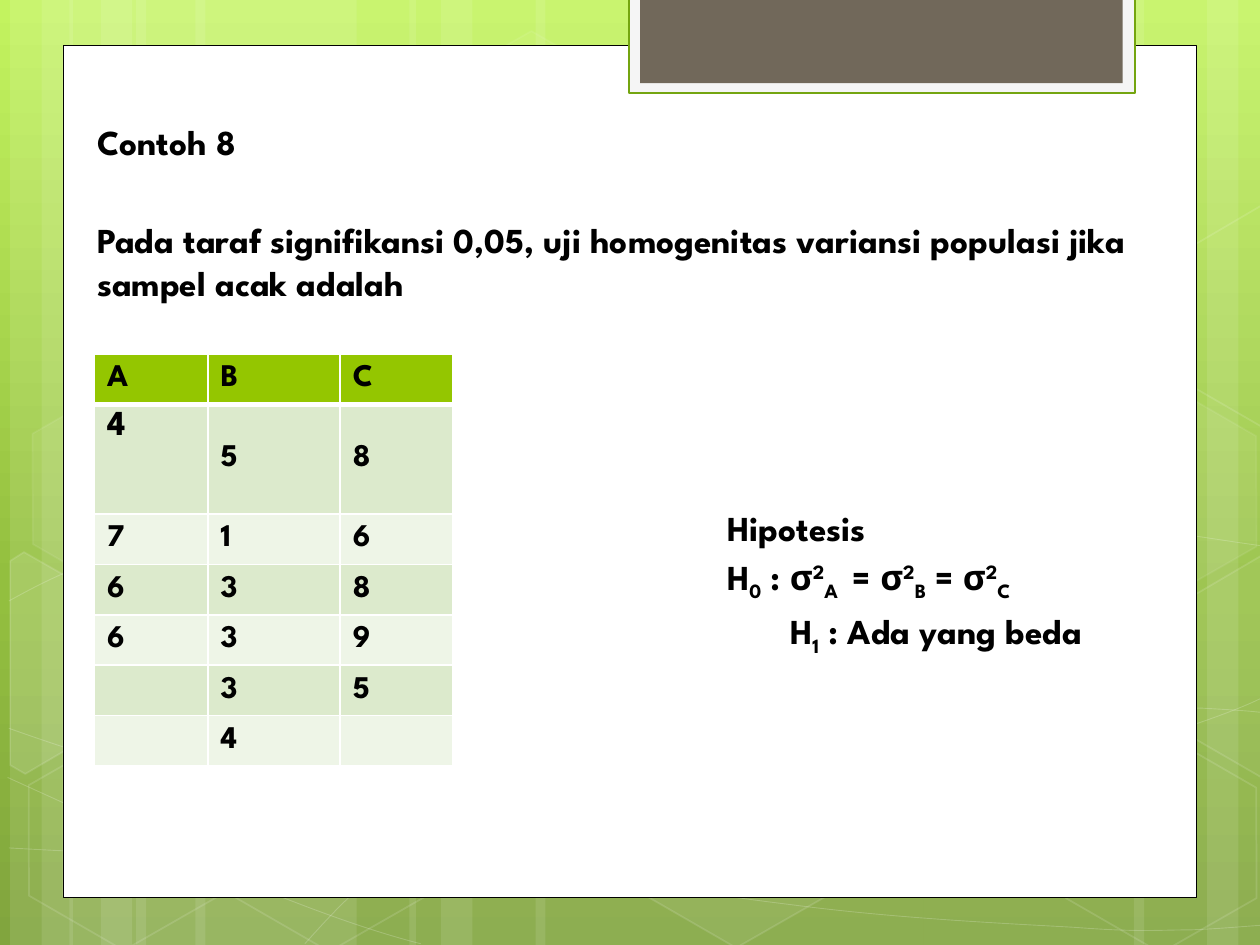
import copy
import math
from dataclasses import dataclass, field
from typing import Any, Optional

import pptx
import pptx.dml.color
import pptx.enum.shapes
import pptx.enum.text
import pptx.oxml
import pptx.oxml.ns
import pptx.util
from pptx.util import Inches

qn = pptx.oxml.ns.qn
NAMESPACE = pptx.oxml.ns.nsdecls("a")
SHAPES = pptx.enum.shapes.MSO_SHAPE
ANCHORS = pptx.enum.text.MSO_ANCHOR
TILT = 30
Point = tuple[float, float]


@dataclass(frozen=True)
class Theme:
    font: str = "League Spartan"
    body_size: int = 20
    cell_size: int = 18
    ink: str = "000000"
    white: str = "FFFFFF"
    frame: str = "F5F5F5"
    frame_line: str = "74A510"
    tab: str = "71685A"
    header: str = "94C600"
    stripes: tuple[str, str] = ("DCEACC", "EEF5E7")
    gradient: tuple = ((0, "C3F35F"), (0.62, "93BF3F"), (1, "81A53E"))


@dataclass(frozen=True)
class Paint:
    fill: Optional[str] = None
    fill_alpha: int = 100
    line: Optional[str] = None
    width: float = 1
    line_alpha: int = 100


@dataclass(frozen=True)
class Hexagon:
    left: float
    top: float
    fill_alpha: int
    line_alpha: int


@dataclass(frozen=True)
class CutHexagon:
    center: Point
    fill_alpha: int
    corners: list[Point]


@dataclass(frozen=True)
class BodyLine:
    spans: list[tuple[str, int]]
    space: float = 4
    level: int = 0
    indent: float = 0


@dataclass(frozen=True)
class DataTable:
    left: float = 0.75
    top: float = 2.81
    widths: tuple = (0.9, 1.05, 0.89)
    heights: tuple = (0.4, 0.87) + (0.4,) * 5
    rows: list[str] = field(default_factory=lambda: ["ABC", "458", "716", "638", "639", " 35", " 4 "])


THEME = Theme()
BANDS = [(1.08, 1.75), (0.08, 0.5), (0.33, 0.83), (1.55, 1.75), (0.55, 0.5), (0.8, 0.83),
         (7.33, 1.75), (9.58, 0.5), (9, 0.83), (4.25, 3.08), (3.25, 0.5), (3.5, 0.83)]
CURVES = [
    [(0.07, 6.73), (0.61, 6.76), (1.15, 6.79), (1.9, 6.78), (2.65, 6.77), (3.58, 6.75), (4.58, 6.65),
     (5.58, 6.55), (7, 6.36), (7.92, 6.17), (8.83, 5.98), (9.77, 5.68), (10.07, 5.51)],
    [(0.07, 4.77), (0.36, 4.61), (0.65, 4.46), (1.21, 4.31), (1.78, 4.16), (2.59, 3.94), (3.47, 3.87),
     (4.36, 3.8), (5.44, 3.79), (6.54, 3.87), (7.64, 3.95), (9.47, 4.26), (10.07, 4.34)],
    [(0.06, 6.17), (1.27, 6.72), (2.47, 7.27), (3.34, 7.49)],
    [(0.07, 5.78), (0.38, 5.89), (0.7, 6), (1.28, 6.16), (1.86, 6.31), (2.73, 6.56), (3.57, 6.73),
     (4.4, 6.9), (5.45, 7.08), (6.28, 7.18), (7.11, 7.29), (8, 7.33), (8.53, 7.36),
     (9.05, 7.4), (9.19, 7.38), (9.45, 7.38), (9.71, 7.37), (9.89, 7.35), (10.07, 7.34)],
    [(2.42, 7.49), (2.6, 7.29), (2.78, 7.09), (3.02, 6.91), (3.26, 6.73), (3.6, 6.53), (3.88, 6.39),
     (4.16, 6.25), (4.33, 6.19), (4.7, 6.09), (5.06, 5.99), (5.73, 5.85), (6.08, 5.78),
     (6.44, 5.71), (6.49, 5.71), (6.8, 5.69), (7.11, 5.66), (7.6, 5.63), (7.94, 5.62),
     (8.29, 5.61), (8.86, 5.62), (8.86, 5.62), (8.86, 5.62), (9.53, 5.62), (9.53, 5.62),
     (9.71, 5.63), (9.88, 5.64), (9.97, 5.65), (10.06, 5.66), (10.03, 5.65), (10.06, 5.66)],
]
HEXAGONS = [Hexagon(3.34, 0.36, 4, 8), Hexagon(4.97, 5.89, 6, 12), Hexagon(0.11, 5.91, 0, 12),
            Hexagon(0.14, 3.12, 7, 8), Hexagon(1.74, 5.92, 0, 12), Hexagon(7.53, 4.53, 10, 12),
            Hexagon(8.34, 5.93, 0, 12), Hexagon(8.34, 3.14, 7, 8)]
CUT_HEXAGONS = [
    CutHexagon((0.36, 5.35), 10, [(0.08, 4.45), (0.19, 4.38), (0.96, 4.82), (0.95, 5.7), (0.2, 6.14), (0.08, 6.07)]),
    CutHexagon((9.85, 5.2), 4, [(9.26, 4.85), (10.01, 4.41), (10.09, 4.46), (10.09, 6.13), (10.02, 6.17), (9.26, 5.73)]),
    CutHexagon((9.85, 2.41), 0, [(9.26, 2.07), (10.01, 1.63), (10.1, 1.68), (10.09, 3.35), (10.02, 3.39), (9.26, 2.95)]),
]
BODY = [
    BodyLine([("Contoh 8", 0)]),
    BodyLine([("Pada taraf signifikansi 0,05, uji homogenitas variansi populasi jika sampel acak adalah", 0)],
             space=32),
    BodyLine([("Hipotesis", 0)], space=116, level=2, indent=5),
    BodyLine([("H", 0), ("0", -25), (" : σ", 0), ("2", 30), ("A ", -25), (" = σ", 0), ("2", 30),
              ("B", -25), (" = σ", 0), ("2", 30), ("C", -25)], level=2, indent=5),
    BodyLine([("H", 0), ("1", -25), (" : Ada yang beda", 0)], level=3, indent=5.5),
]


def color(value: str) -> pptx.dml.color.RGBColor:
    return pptx.dml.color.RGBColor.from_string(value)


def set_values(target: Any, values: dict[str, Any]) -> None:
    for name, value in values.items():
        setattr(target, name, value)


def set_font(font: Any, size: int) -> None:
    set_values(font, {"name": THEME.font, "size": pptx.util.Pt(size), "bold": True})
    font.color.rgb = color(THEME.ink)


def paint_fill(fill: Any, value: Optional[str], alpha: int, owner: Any) -> None:
    if value is None or alpha == 0:
        fill.background()
        return
    fill.solid()
    fill.fore_color.rgb = color(value)
    if alpha < 100:
        tint = owner.find(qn("a:solidFill")).find(qn("a:srgbClr"))
        tint.append(pptx.oxml.parse_xml(f'<a:alpha {NAMESPACE} val="{alpha * 1000}"/>'))


def paint_shape(shape: Any, paint: Paint) -> None:
    shape.shadow.inherit = False
    properties = shape.element.spPr
    paint_fill(shape.fill, paint.fill, paint.fill_alpha, properties)
    shape.line.width = pptx.util.Pt(paint.width)
    paint_fill(shape.line.fill, paint.line, paint.line_alpha, properties.find(qn("a:ln")))


def add_preset(page: Any, kind: Any, box: tuple[float, float, float, float], paint: Paint) -> Any:
    shape = page.shapes.add_shape(kind, *map(Inches, box))
    paint_shape(shape, paint)
    return shape


def add_outline(page: Any, points: list[Point], paint: Paint, close: bool) -> Any:
    corners = [(Inches(x), Inches(y)) for x, y in points]
    builder = page.shapes.build_freeform(*corners[0])
    builder.add_line_segments(corners[1:], close=close)
    shape = builder.convert_to_shape()
    paint_shape(shape, paint)
    return shape


def add_curve(page: Any, knots: list[Point], paint: Paint) -> None:
    outline = add_outline(page, knots, paint, False).element.find(".//" + qn("a:path"))
    segments = outline.findall(qn("a:lnTo"))
    for start in range(0, len(segments), 3):
        bend = pptx.oxml.parse_xml(f"<a:cubicBezTo {NAMESPACE}/>")
        for segment in segments[start:start + 3]:
            bend.append(segment[0])
            outline.remove(segment)
        outline.append(bend)


def untilt(point: Point, center: Point) -> Point:
    angle = math.radians(TILT)
    x, y = point[0] - center[0], point[1] - center[1]
    return (center[0] + x * math.cos(angle) + y * math.sin(angle),
            center[1] - x * math.sin(angle) + y * math.cos(angle))


def paint_background(page: Any) -> None:
    fill = page.background.fill
    fill.gradient()
    fill.gradient_angle = 270
    stops = page.element.find(".//" + qn("a:gsLst"))
    stops.append(copy.deepcopy(stops[0]))
    for stop, (position, value) in zip(fill.gradient_stops, THEME.gradient):
        stop.position = position
        stop.color.rgb = color(value)


def add_backdrop(page: Any) -> None:
    white = THEME.white
    for left, width in BANDS:
        add_preset(page, SHAPES.RECTANGLE, (left, 0, width, 7.5), Paint(white, 10))
    for knots in CURVES:
        add_curve(page, knots, Paint(line=white, width=0.5, line_alpha=20))
    for item in HEXAGONS:
        shape = add_preset(page, SHAPES.HEXAGON, (item.left, item.top, 1.75, 1.52),
                           Paint(white, item.fill_alpha, white, 1, item.line_alpha))
        shape.rotation = TILT
        shape.adjustments[0], shape.adjustments[1] = 0.29, 1.15
    for item in CUT_HEXAGONS:
        corners = [untilt(corner, item.center) for corner in item.corners]
        add_outline(page, corners, Paint(white, item.fill_alpha, white, 1, 12), True).rotation = TILT
    for box, paint in [((0.5, 0.36, 9, 6.76), Paint(white, line=THEME.ink, width=0.5)),
                       ((4.99, -0.02, 4.02, 0.76), Paint(THEME.frame, line=THEME.frame_line, width=1.25)),
                       ((5.08, -0.02, 3.83, 0.68), Paint(THEME.tab))]:
        add_preset(page, SHAPES.RECTANGLE, box, paint)


def fill_body(page: Any, body: Any) -> None:
    page.shapes.element.append(body.element)
    set_values(body, {"left": Inches(0.67), "top": Inches(0.91), "width": Inches(8.66), "height": Inches(6.06)})
    frame = body.text_frame
    set_values(frame, {"word_wrap": True, "auto_size": pptx.enum.text.MSO_AUTO_SIZE.NONE,
                       "vertical_anchor": ANCHORS.TOP})
    for index, line in enumerate(BODY):
        para = frame.add_paragraph() if index else frame.paragraphs[0]
        set_values(para, {"level": line.level, "space_before": pptx.util.Pt(line.space)})
        properties = para._p.get_or_add_pPr()
        properties.set("marL", str(Inches(line.indent)))
        properties.set("indent", "0")
        properties.append(pptx.oxml.parse_xml(f"<a:buNone {NAMESPACE}/>"))
        for text, baseline in line.spans:
            span = para.add_run()
            span.text = text
            set_font(span.font, THEME.body_size)
            if baseline:
                span._r.get_or_add_rPr().set("baseline", str(baseline * 1000))


def set_borders(cell: Any, widths: dict[str, float]) -> None:
    properties = cell._tc.get_or_add_tcPr()
    for index, (side, width) in enumerate(widths.items()):
        properties.insert(index, pptx.oxml.parse_xml(
            f'<a:ln{side} {NAMESPACE} w="{pptx.util.Pt(width)}"><a:solidFill>'
            f'<a:srgbClr val="{THEME.white}"/></a:solidFill></a:ln{side}>'))


def add_samples(page: Any, data: DataTable) -> None:
    box = (data.left, data.top, sum(data.widths), sum(data.heights))
    table = page.shapes.add_table(len(data.heights), len(data.widths), *map(Inches, box)).table
    for column, width in zip(table.columns, data.widths):
        column.width = Inches(width)
    for row_index, (row, height, texts) in enumerate(zip(table.rows, data.heights, data.rows)):
        row.height = Inches(height)
        for column_index, (cell, text) in enumerate(zip(row.cells, texts)):
            first_sample = (row_index, column_index) == (1, 0)
            cell.vertical_anchor = ANCHORS.TOP if first_sample else ANCHORS.MIDDLE
            cell.text = text.strip()
            set_font(cell.text_frame.paragraphs[0].font, THEME.body_size if first_sample else THEME.cell_size)
            cell.fill.solid()
            cell.fill.fore_color.rgb = color(THEME.stripes[(row_index - 1) % 2] if row_index else THEME.header)
            set_borders(cell, {"L": 1, "R": 1, "T": 3 if row_index == 1 else 1, "B": 1 if row_index else 3})


def main() -> None:
    deck = pptx.Presentation()
    set_values(deck, {"slide_width": Inches(10), "slide_height": Inches(7.5)})
    page = deck.slides.add_slide(deck.slide_layouts[1])
    title = page.shapes.title.element
    title.getparent().remove(title)
    paint_background(page)
    add_backdrop(page)
    fill_body(page, page.placeholders[1])
    add_samples(page, DataTable())
    deck.save("out.pptx")


if __name__ == "__main__":
    main()
